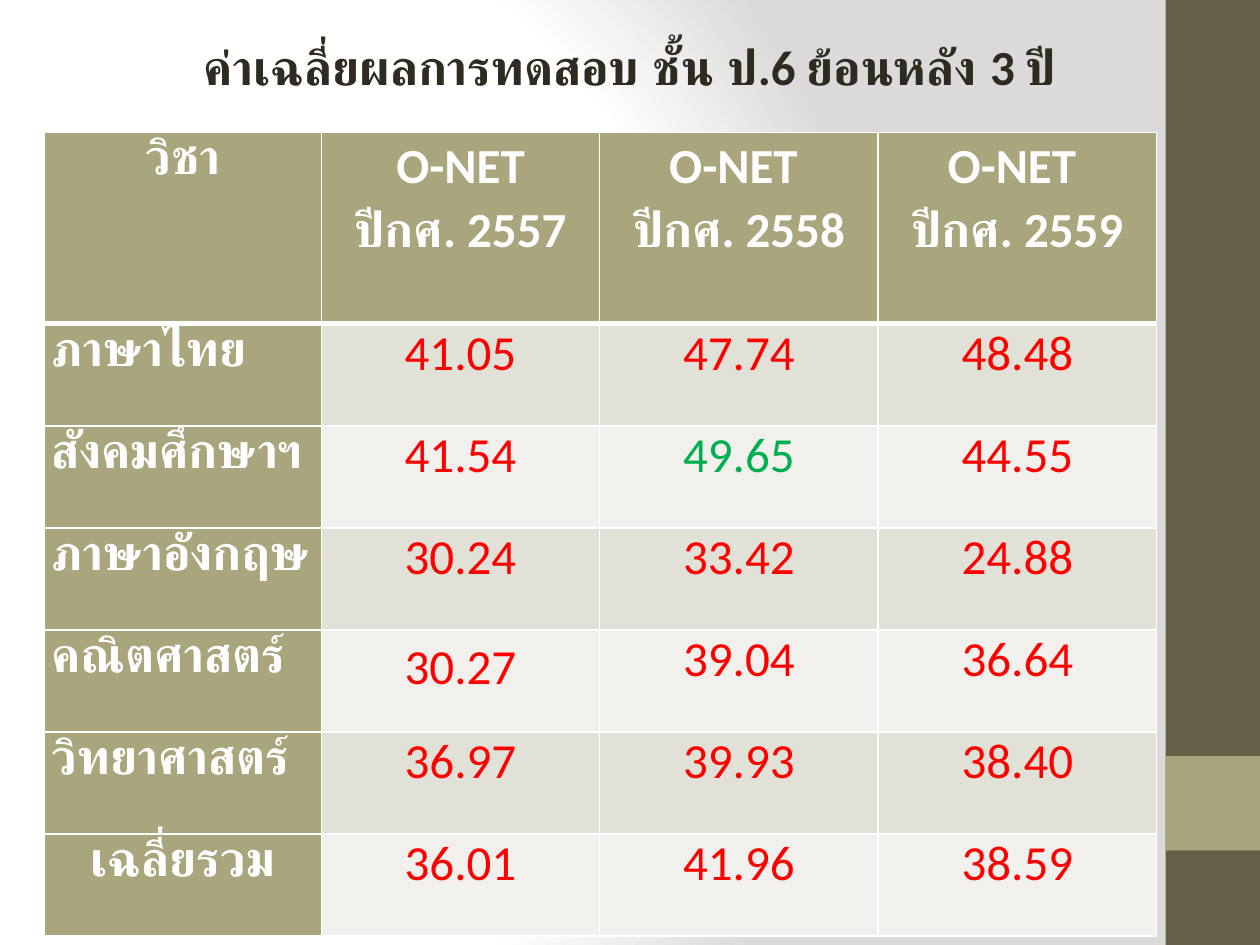
from dataclasses import dataclass

from lxml import etree
from pptx import Presentation
from pptx.dml.color import RGBColor
from pptx.enum.shapes import MSO_SHAPE
from pptx.enum.text import MSO_ANCHOR, PP_ALIGN
from pptx.oxml import parse_xml
from pptx.oxml.ns import nsdecls
from pptx.util import Pt

CENTER, LEFT = PP_ALIGN.CENTER, PP_ALIGN.LEFT
TOP, MIDDLE = MSO_ANCHOR.TOP, MSO_ANCHOR.MIDDLE
RECTANGLE = MSO_SHAPE.RECTANGLE
EMU_PER_PX = 9144
BLANK_LAYOUT = 6

HEADERS = ["วิชา", " O-NET \nปีกศ. 2557", "O-NET \nปีกศ. 2558", "O-NET \nปีกศ. 2559"]
SCORES = [
    ("ภาษาไทย", "41.05", "47.74", "48.48"),
    ("สังคมศึกษาฯ", "41.54", "49.65", "44.55"),
    ("ภาษาอังกฤษ", "30.24", "33.42", "24.88"),
    ("คณิตศาสตร์", "30.27", "39.04", "36.64"),
    ("วิทยาศาสตร์", "36.97", "39.93", "38.40"),
    ("เฉลี่ยรวม", "36.01", "41.96", "38.59"),
]
HIGHEST_SCORE = "49.65"
LOWERED_SCORE = "30.27"
AVERAGE_LABEL = "เฉลี่ยรวม"


@dataclass
class Theme:
    font: str = "Calibri"
    size: int = 28
    title: str = "2F2B20"
    white: str = "FFFFFF"
    shade: str = "DADADA"
    sidebar: str = "675E47"
    accent: str = "A9A57C"
    bands: tuple = ("E2E1D7", "F1F0EC")
    score: str = "FF0000"
    highlight: str = "00B050"


def px(length):
    return length * EMU_PER_PX


def write_text(frame, text, *, theme, color, bold=False, align=CENTER, spacing=1.0):
    for index, line in enumerate(text.split("\n")):
        paragraph = frame.add_paragraph() if index else frame.paragraphs[0]
        paragraph.alignment = align
        paragraph.line_spacing = spacing
        run = paragraph.add_run()
        run.text = line
        run.font.name = theme.font
        run.font.size = Pt(theme.size)
        run.font.bold = bold
        run.font.color.rgb = RGBColor.from_string(color)


class SlideBuilder:
    """Draws styled elements on the current slide."""

    def __init__(self, slide, theme):
        self.slide = slide
        self.theme = theme

    def background(self):
        stops = ((0, self.theme.white), (75, self.theme.white), (100, self.theme.shade))
        stop_xml = "".join(
            f'<a:gs pos="{position * 1000}"><a:srgbClr val="{color}"/></a:gs>'
            for position, color in stops
        )
        background = parse_xml(
            f'<p:bg {nsdecls("p", "a")}><p:bgPr><a:gradFill rotWithShape="1">'
            f'<a:gsLst>{stop_xml}</a:gsLst><a:path path="circle">'
            '<a:fillToRect l="20000" t="50000" r="100000" b="50000"/></a:path>'
            "</a:gradFill><a:effectLst/></p:bgPr></p:bg>"
        )
        self.slide.element.cSld.insert(0, background)

    def rectangle(self, left, top, width, height, color):
        shape = self.slide.shapes.add_shape(
            RECTANGLE, px(left), px(top), px(width), px(height)
        )
        shape.shadow.inherit = False
        shape.fill.solid()
        shape.fill.fore_color.rgb = RGBColor.from_string(color)
        shape.line.fill.background()

    def title(self, text, left, top, width, height):
        box = self.slide.shapes.add_textbox(px(left), px(top), px(width), px(height))
        box.text_frame.word_wrap = True
        box.text_frame.vertical_anchor = MIDDLE
        write_text(box.text_frame, text, theme=self.theme, color=self.theme.title, bold=True)

    def table(self, left, top, widths, heights):
        table = self.slide.shapes.add_table(
            len(heights), len(widths), px(left), px(top), px(sum(widths)), px(sum(heights))
        ).table
        table.first_row = table.horz_banding = False
        for column, width in zip(table.columns, widths):
            column.width = px(width)
        for row, height in zip(table.rows, heights):
            row.height = px(height)
        return table

    def borders(self, cell, **widths):
        properties = cell._tc.get_or_add_tcPr()
        for side in "LRTB":
            line = parse_xml(
                f'<a:ln{side} {nsdecls("a")} w="{Pt(widths.get(side, 1))}"/>'
            )
            fill = etree.SubElement(line, line.tag.replace(f"ln{side}", "solidFill"))
            color = etree.SubElement(fill, line.tag.replace(f"ln{side}", "srgbClr"))
            color.set("val", self.theme.white)
            properties.append(line)

    def cell(self, cell, text, fill, margin_top=0, border_widths=None, **text_format):
        self.borders(cell, **(border_widths or {}))
        cell.fill.solid()
        cell.fill.fore_color.rgb = RGBColor.from_string(fill)
        cell.margin_left = cell.margin_right = px(6)
        cell.margin_top, cell.margin_bottom = px(margin_top), 0
        cell.vertical_anchor = TOP
        write_text(cell.text_frame, text, theme=self.theme, **text_format)

    def score_table(self, left, top, widths, heights):
        theme = self.theme
        table = self.table(left, top, widths, heights)
        label_format = {"color": theme.white, "bold": True, "spacing": 1.07}
        for column, text in enumerate(HEADERS):
            self.cell(table.cell(0, column), text, theme.accent,
                      border_widths={"B": 3}, **label_format)
        for row, (subject, *scores) in enumerate(SCORES, start=1):
            align = CENTER if subject == AVERAGE_LABEL else LEFT
            self.cell(table.cell(row, 0), subject, theme.accent,
                      border_widths={"T": 3 if row == 1 else 1},
                      align=align, **label_format)
            for column, score in enumerate(scores, start=1):
                self.cell(
                    table.cell(row, column), score, theme.bands[(row - 1) % 2],
                    margin_top=6 if score == LOWERED_SCORE else 0,
                    border_widths={"T": 3 if row == 1 else 1},
                    color=theme.highlight if score == HIGHEST_SCORE else theme.score,
                )


def main():
    presentation = Presentation()
    presentation.slide_width, presentation.slide_height = px(1000), px(750)
    slide = presentation.slides.add_slide(presentation.slide_layouts[BLANK_LAYOUT])
    theme = Theme()
    builder = SlideBuilder(slide, theme)
    builder.background()
    builder.rectangle(925, 0, 75, 750, theme.sidebar)
    builder.rectangle(925, 600, 75, 75, theme.accent)
    builder.score_table(35, 105, [220] + [221] * 3, [152] + [81] * len(SCORES))
    builder.title("ค่าเฉลี่ยผลการทดสอบ ชั้น ป.6 ย้อนหลัง 3 ปี", 0, 24, 1000, 57)
    presentation.save("out.pptx")


if __name__ == "__main__":
    main()
